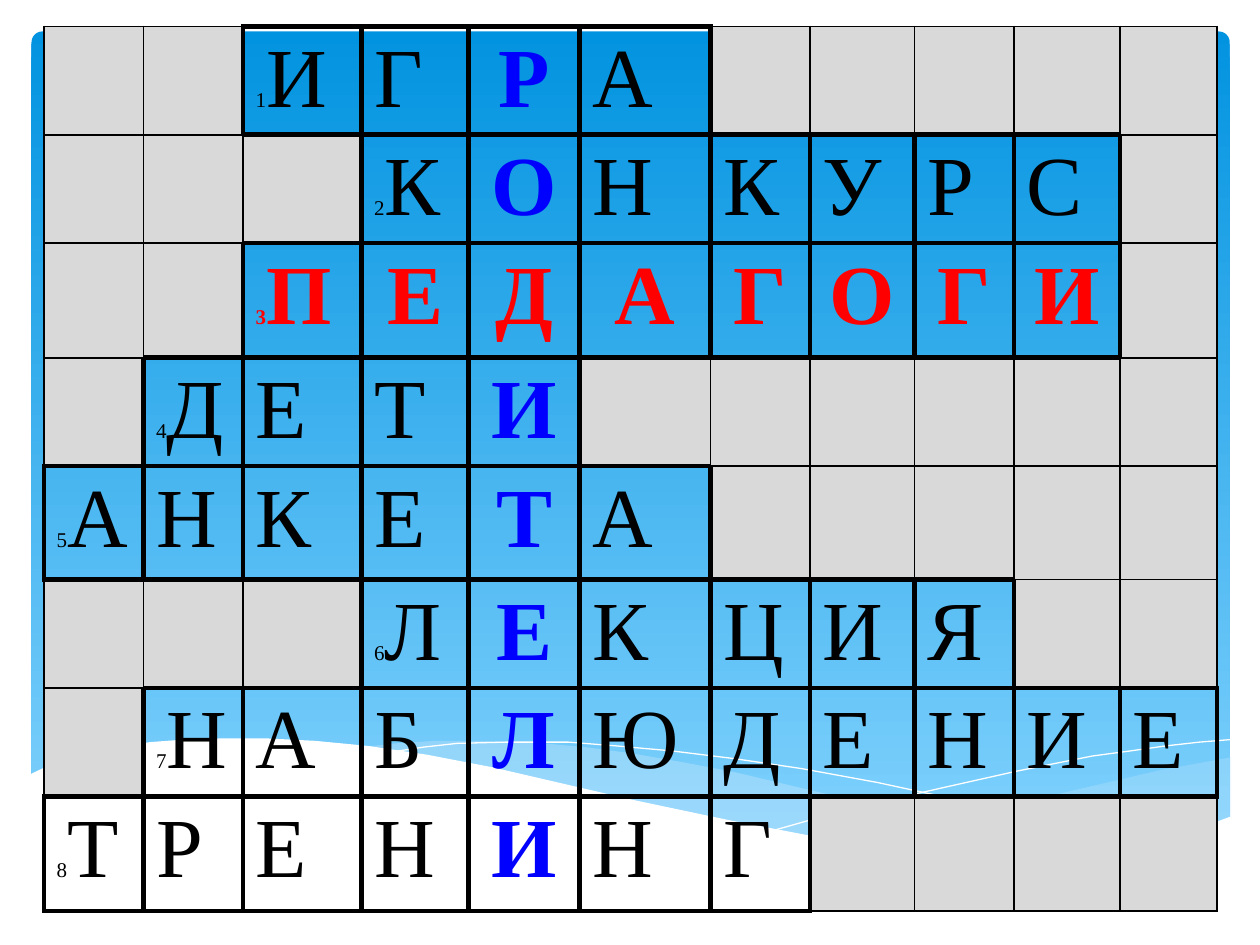
from dataclasses import dataclass

from lxml import etree
from pptx import Presentation
from pptx.dml.color import RGBColor
from pptx.enum.shapes import MSO_SHAPE
from pptx.enum.text import PP_ALIGN
from pptx.oxml.ns import qn
from pptx.util import Inches, Pt

ROUNDED = MSO_SHAPE.ROUNDED_RECTANGLE
LEFT, CENTER = PP_ALIGN.LEFT, PP_ALIGN.CENTER


@dataclass(frozen=True)
class Theme:
    font: str = "Times New Roman"
    letter_size: int = 48
    number_size: int = 12
    black: str = "000000"
    white: str = "FFFFFF"
    keyword: str = "0000FF"
    highlight: str = "FF0000"
    blank: str = "D9D9D9"
    sky_top: str = "0293E0"
    sky_bottom: str = "83D3FE"
    wave: str = "C6E7FC"
    thick: int = 3
    thin: int = 1


theme = Theme()

# Crossword: answer and the column where it starts
ANSWERS = [("ИГРА", 2), ("КОНКУРС", 3), ("ПЕДАГОГИ", 2), ("ДЕТИ", 1),
           ("АНКЕТА", 0), ("ЛЕКЦИЯ", 3), ("НАБЛЮДЕНИЕ", 1), ("ТРЕНИНГ", 0)]
COLUMN_WIDTHS = [0.79, 0.79, 0.94, 0.85, 0.88, 1.04, 0.79, 0.83, 0.79, 0.84, 0.77]
ROW_HEIGHTS = [0.86, 0.86, 0.91, 0.86, 0.9, 0.86, 0.86, 0.91]
KEYWORD_COLUMN, HIGHLIGHT_ROW = 4, 2

# Waves: points, fill, opacity in percent
WAVES = [
    ([(9.77, 6.01), (9.5, 6.06), (9.22, 6.11), (8.92, 6.18), (8.62, 6.25), (8.06, 6.38),
      (7.54, 6.5), (7.07, 6.59), (6.62, 6.67), (6.92, 6.71), (7.19, 6.74), (7.58, 6.78),
      (8.04, 6.8), (8.45, 6.79), (8.82, 6.75), (9.14, 6.69), (9.44, 6.61), (9.77, 6.49)],
     theme.wave, 29),
    ([(8.94, 6.75), (8.38, 6.67), (7.76, 6.56), (7.07, 6.42), (6.3, 6.24), (5.84, 6.13),
      (5.42, 6.05), (5.02, 5.98), (4.65, 5.93), (4.2, 5.89), (3.8, 5.88), (3.45, 5.88),
      (3.14, 5.9), (2.87, 5.93), (3.23, 5.98), (3.63, 6.05), (4.05, 6.13), (4.5, 6.24),
      (5.3, 6.42), (6.02, 6.57), (6.51, 6.66), (6.96, 6.72), (7.37, 6.77), (7.86, 6.8),
      (8.29, 6.8), (8.68, 6.78)], theme.wave, 40),
    ([(3.1, 5.97), (3.36, 5.93), (3.63, 5.9), (4.02, 5.89), (4.51, 5.89), (4.89, 5.92),
      (5.33, 5.96), (5.82, 6.02), (6.36, 6.1), (6.96, 6.21), (7.61, 6.35), (8.32, 6.52),
      (9.08, 6.73)], None, 100),
    ([(6.14, 6.59), (6.53, 6.48), (6.96, 6.37), (7.49, 6.25), (8.07, 6.12), (8.67, 6),
      (8.97, 5.96), (9.25, 5.92), (9.52, 5.89), (9.76, 5.87)], None, 100),
    ([(9.77, 6.48), (9.5, 6.58), (9.2, 6.67), (8.87, 6.73), (8.5, 6.77), (8.09, 6.79),
      (7.61, 6.77), (7.08, 6.72), (6.47, 6.64), (5.79, 6.51), (5.03, 6.35), (4.47, 6.22),
      (3.91, 6.09), (3.39, 5.99), (2.92, 5.92), (2.5, 5.88), (2.11, 5.86), (1.77, 5.86),
      (1.46, 5.87), (1.19, 5.89), (0.95, 5.93), (0.75, 5.97), (0.59, 6.01), (0.4, 6.07),
      (0.23, 6.15), (0.23, 7.31), (9.77, 7.31)], theme.white, 100),
]


def add_text(paragraph, text, size=theme.letter_size, color=theme.black, bold=False):
    run = paragraph.add_run()
    run.text = text
    run.font.name = theme.font
    run.font.size = Pt(size)
    run.font.bold = bold
    run.font.color.rgb = RGBColor.from_string(color)


def has_letter(row, column):
    if not 0 <= row < len(ANSWERS):
        return False
    answer, start = ANSWERS[row]
    return start <= column < start + len(answer)


presentation = Presentation()
presentation.slide_width, presentation.slide_height = Inches(10), Inches(7.5)
slide = presentation.slides.add_slide(presentation.slide_layouts[6])

# Sky panel
sky = slide.shapes.add_shape(ROUNDED, Inches(0.25), Inches(0.25), Inches(9.51), Inches(6.6))
sky.adjustments[0] = 0.013
sky.shadow.inherit = False
sky.line.fill.background()
sky.fill.gradient()
sky.fill.gradient_angle = 270
for stop, color in zip(sky.fill.gradient_stops, (theme.sky_top, theme.sky_bottom)):
    stop.color.rgb = RGBColor.from_string(color)

# Waves and their thin white crests
for points, color, opacity in WAVES:
    corners = [(Inches(x), Inches(y)) for x, y in points]
    builder = slide.shapes.build_freeform(*corners[0])
    builder.add_line_segments(corners[1:], close=color is not None)
    wave = builder.convert_to_shape()
    wave.shadow.inherit = False
    if color is None:
        wave.fill.background()
        wave.line.color.rgb = RGBColor.from_string(theme.white)
        wave.line.width = Pt(0)
        continue
    wave.line.fill.background()
    wave.fill.solid()
    wave.fill.fore_color.rgb = RGBColor.from_string(color)
    if opacity < 100:
        solid = wave.fill.fore_color._xFill
        etree.SubElement(solid[0], qn("a:alpha"), val=str(opacity * 1000))

# Crossword table
table = slide.shapes.add_table(
    len(ROW_HEIGHTS), len(COLUMN_WIDTHS), Inches(0.35), Inches(0.21),
    Inches(sum(COLUMN_WIDTHS)), Inches(sum(ROW_HEIGHTS))).table
table.first_row = table.horz_banding = False
for column, width in zip(table.columns, COLUMN_WIDTHS):
    column.width = Inches(width)
for row, height in zip(table.rows, ROW_HEIGHTS):
    row.height = Inches(height)

for row, (answer, start) in enumerate(ANSWERS):
    for column in range(len(COLUMN_WIDTHS)):
        cell = table.cell(row, column)
        filled = has_letter(row, column)

        # An edge is thick when it touches a letter
        properties = cell._tc.get_or_add_tcPr()
        neighbours = {"a:lnL": (row, column - 1), "a:lnR": (row, column + 1),
                      "a:lnT": (row - 1, column), "a:lnB": (row + 1, column)}
        for side, neighbour in neighbours.items():
            width = theme.thick if filled or has_letter(*neighbour) else theme.thin
            border = etree.SubElement(properties, qn(side), w=str(Pt(width)))
            solid = etree.SubElement(border, qn("a:solidFill"))
            etree.SubElement(solid, qn("a:srgbClr"), val=theme.black)

        if not filled:
            cell.fill.solid()
            cell.fill.fore_color.rgb = RGBColor.from_string(theme.blank)
            continue

        # Letter, with the question number in the first cell
        cell.fill.background()
        first = column == start
        highlighted = row == HIGHLIGHT_ROW
        in_keyword = column == KEYWORD_COLUMN
        color = (theme.highlight if highlighted
                 else theme.keyword if in_keyword else theme.black)
        bold = highlighted or in_keyword
        paragraph = cell.text_frame.paragraphs[0]
        paragraph.alignment = CENTER if bold and not first else LEFT
        if first:
            add_text(paragraph, str(row + 1), size=theme.number_size, color=color, bold=bold)
        add_text(paragraph, answer[column - start], color=color, bold=bold)

presentation.save("out.pptx")
